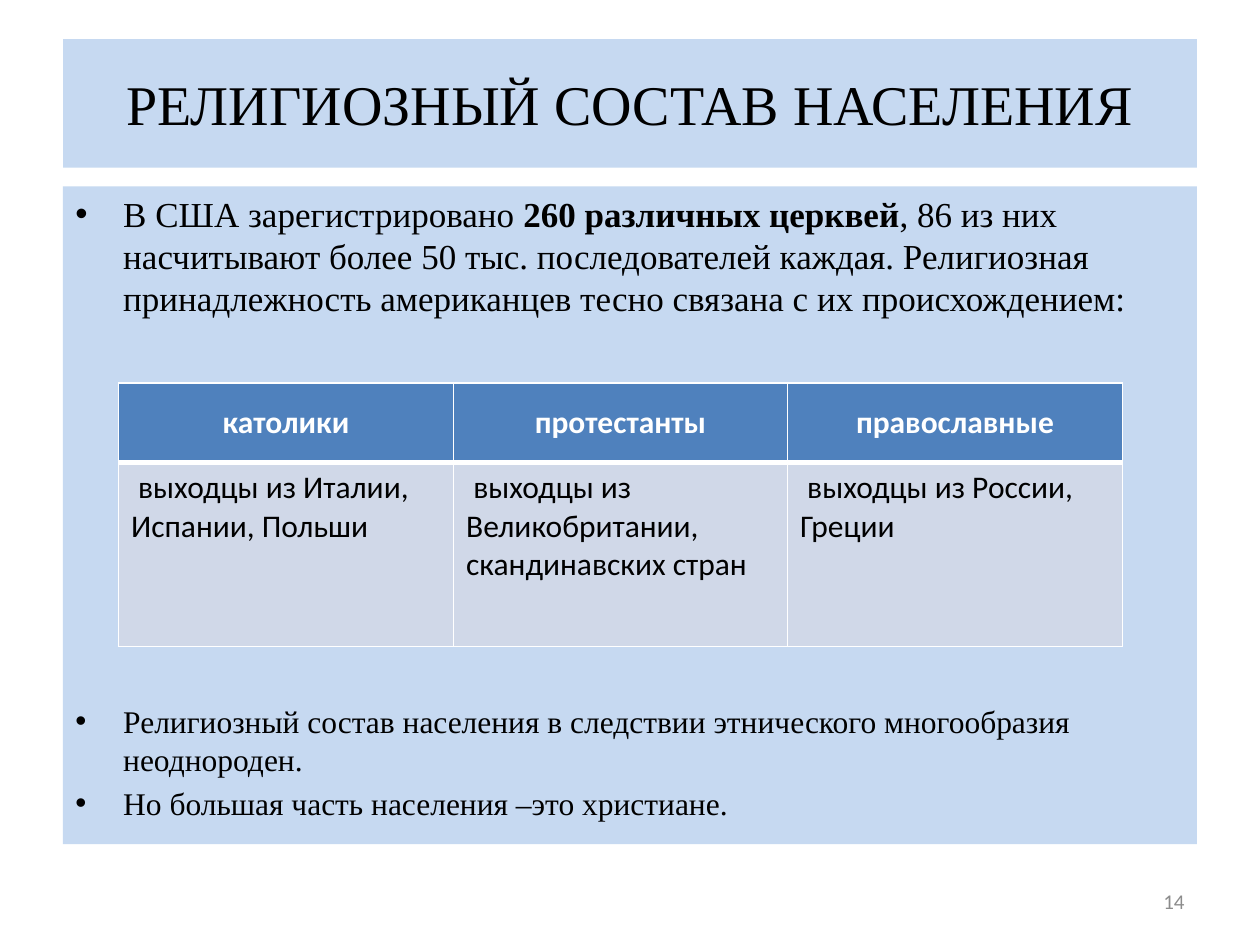
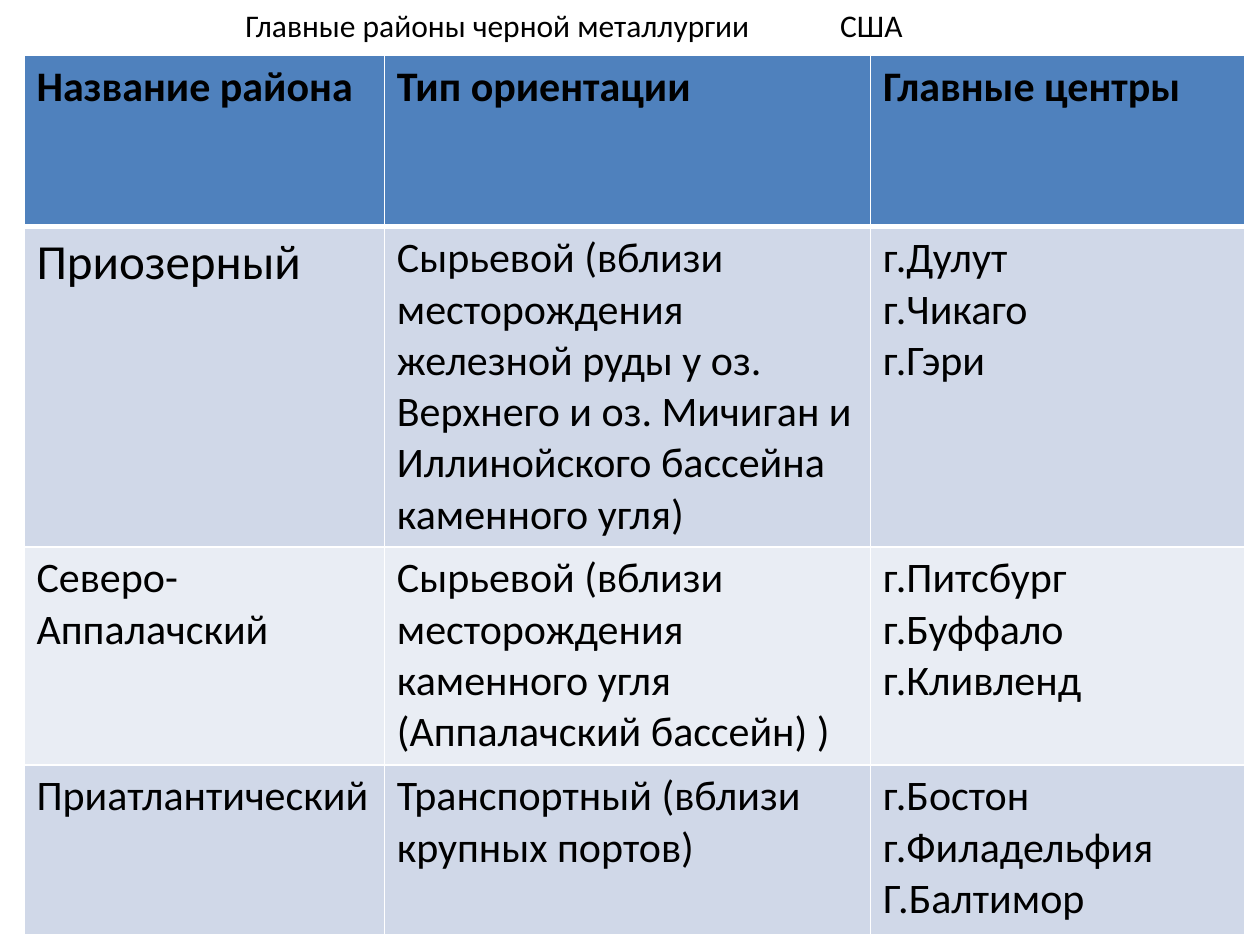
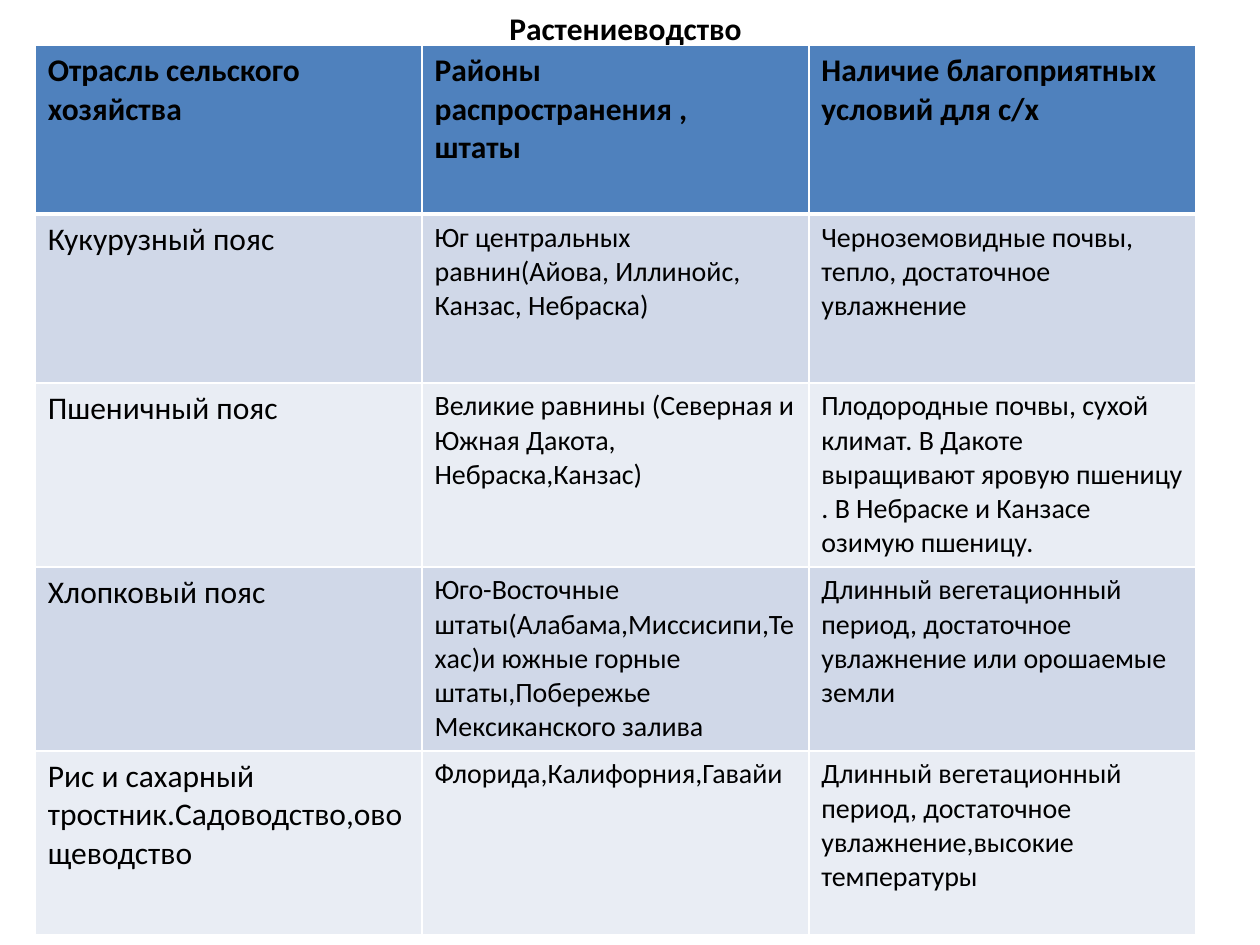
from lxml.etree import SubElement
from pptx import Presentation
from pptx.dml.color import RGBColor
from pptx.enum.text import MSO_ANCHOR as Anchor, MSO_AUTO_SIZE as AutoSize, PP_ALIGN as Align
from pptx.oxml.ns import qn
from pptx.util import Inches, Pt

BLACK = RGBColor(0x00, 0x00, 0x00)
WHITE = RGBColor(0xFF, 0xFF, 0xFF)
GRAY = RGBColor(0x8C, 0x8C, 0x8C)
PANEL = RGBColor(0xC6, 0xD9, 0xF1)
HEADER = RGBColor(0x4F, 0x81, 0xBD)
BANDS = (RGBColor(0xE9, 0xED, 0xF4), RGBColor(0xD0, 0xD8, 0xE8))
SANS = "Calibri"
SERIF = "Times New Roman"
TITLE_ONLY, BLANK = 5, 6
HAIR, RULE = 1, 3

RELIGIONS = [
    ["католики", "протестанты", "православные"],
    [" выходцы из Италии, Испании, Польши",
     " выходцы из Великобритании, скандинавских стран",
     " выходцы из России, Греции"],
]
STEEL = [
    ["Название района", "Тип ориентации", "Главные центры"],
    ["Приозерный",
     "Сырьевой (вблизи месторождения железной руды у оз. Верхнего и оз. Мичиган "
     "и Иллинойского бассейна каменного угля)",
     "г.Дулут\nг.Чикаго\nг.Гэри"],
    ["Северо-Аппалачский",
     "Сырьевой (вблизи месторождения каменного угля (Аппалачский бассейн) )",
     "г.Питсбург\nг.Буффало\nг.Кливленд"],
    ["Приатлантический", "Транспортный (вблизи крупных портов)",
     "г.Бостон\nг.Филадельфия\nГ.Балтимор"],
]
CROPS = [
    ["Отрасль сельского хозяйства", "Районы распространения ,\nштаты",
     "Наличие благоприятных условий для с/х"],
    ["Кукурузный пояс", "Юг центральных равнин(Айова, Иллинойс, Канзас, Небраска)",
     "Черноземовидные почвы, тепло, достаточное увлажнение"],
    ["Пшеничный пояс", "Великие равнины (Северная и Южная Дакота, Небраска,Канзас)",
     "Плодородные почвы, сухой климат. В Дакоте выращивают яровую пшеницу "
     ". В Небраске и Канзасе озимую пшеницу."],
    ["Хлопковый пояс",
     "Юго-Восточные штаты(Алабама,Миссисипи,Техас)и южные горные штаты,"
     "Побережье Мексиканского залива",
     "Длинный вегетационный период, достаточное увлажнение или орошаемые земли"],
    ["Рис и сахарный тростник.Садоводство,овощеводство", "Флорида,Калифорния,Гавайи",
     "Длинный вегетационный период, достаточное увлажнение,высокие температуры"],
]


def set_attrs(target, values):
    for name, value in values.items():
        setattr(target, name, value)


def fill_with(target, color):
    target.fill.solid()
    target.fill.fore_color.rgb = color


def add_run(p, text, size, color=BLACK, bold=False, font=SANS):
    r = p.add_run()
    r.text = text
    set_attrs(r.font, {"size": Pt(size), "bold": bold, "name": font})
    r.font.color.rgb = color


def write(tf, text, size, align=Align.LEFT, **style):
    for i, line in enumerate(text.split("\n")):
        p = tf.add_paragraph() if i else tf.paragraphs[0]
        p.alignment = align
        add_run(p, line, size, **style)


def add_title(s, text, box, size, **style):
    sp = s.shapes.title
    set_attrs(sp, dict(zip(("left", "top", "width", "height"), map(Inches, box))))
    set_attrs(sp.text_frame, {"auto_size": AutoSize.NONE, "word_wrap": True,
                              "vertical_anchor": Anchor.MIDDLE})
    write(sp.text_frame, text, size, Align.CENTER, **style)
    return sp


def add_text(s, box, anchor=Anchor.TOP, wrap=True):
    sp = s.shapes.add_textbox(*map(Inches, box))
    set_attrs(sp.text_frame, {"word_wrap": wrap, "vertical_anchor": anchor})
    return sp


def add_bullet(p, runs, size, before):
    p.space_before = Pt(before)
    pPr = p._p.get_or_add_pPr()
    pPr.set("marL", str(Inches(0.38)))
    pPr.set("indent", str(-Inches(0.38)))
    SubElement(pPr, qn("a:buFont"), typeface="Arial")
    SubElement(pPr, qn("a:buChar"), char="•")
    for text, bold in runs:
        add_run(p, text, size, bold=bold, font=SERIF)


def add_borders(cell, top, bottom):
    tcPr = cell._tc.get_or_add_tcPr()
    for side, width in zip("LRTB", (HAIR, HAIR, top, bottom)):
        ln = SubElement(tcPr, qn(f"a:ln{side}"), w=str(Pt(width)))
        fill = SubElement(ln, qn("a:solidFill"))
        SubElement(fill, qn("a:srgbClr"), val=str(WHITE))


def add_grid(s, data, left, top, widths, heights, size_of, header_color=BLACK,
             header_align=Align.LEFT, header_anchor=Anchor.TOP):
    frame = s.shapes.add_table(len(data), len(widths), Inches(left), Inches(top),
                               Inches(sum(widths)), Inches(sum(heights)))
    table = frame.table
    for col, width in zip(table.columns, widths):
        col.width = Inches(width)
    for row, height in zip(table.rows, heights):
        row.height = Inches(height)
    for i, texts in enumerate(data):
        head = i == 0
        for j, text in enumerate(texts):
            cell = table.cell(i, j)
            add_borders(cell, RULE if i == 1 else HAIR, RULE if head else HAIR)
            fill_with(cell, HEADER if head else BANDS[i % 2])
            cell.vertical_anchor = header_anchor if head else Anchor.TOP
            write(cell.text_frame, text, size_of(i, j),
                  header_align if head else Align.LEFT,
                  color=header_color if head else BLACK, bold=head)


def build_religion(prs):
    s = prs.slides.add_slide(prs.slide_layouts[TITLE_ONLY])
    title = add_title(s, "РЕЛИГИОЗНЫЙ СОСТАВ НАСЕЛЕНИЯ", (0.5, 0.31, 9, 1.02), 32, font=SERIF)
    panel = add_text(s, (0.5, 1.48, 9, 5.22))
    for sp in (title, panel):
        fill_with(sp, PANEL)
    tf = panel.text_frame
    add_bullet(tf.paragraphs[0], [
        ("В США зарегистрировано ", False),
        ("260 различных церквей", True),
        (", 86 из них насчитывают более 50 тыс. последователей каждая. Религиозная "
         "принадлежность американцев тесно связана с их происхождением:", False)], 20, 4.5)
    for text, before in (
            ("Религиозный состав населения в следствии этнического многообразия неоднороден.", 219),
            ("Но большая часть населения –это христиане.", 3.6)):
        add_bullet(tf.add_paragraph(), [(text, False)], 18, before)
    add_grid(s, RELIGIONS, 0.94, 3.04, [2.66, 2.65, 2.66], [0.63, 1.46], lambda i, j: 18,
             WHITE, Align.CENTER, Anchor.MIDDLE)
    number = add_text(s, (7.17, 6.95, 2.33, 0.4), Anchor.MIDDLE)
    write(number.text_frame, "14", 12, Align.RIGHT, color=GRAY)


def build_steel(prs):
    s = prs.slides.add_slide(prs.slide_layouts[BLANK])
    add_grid(s, STEEL, 0.19, 0.44, [2.86, 3.86, 2.97], [1.36, 2.54, 1.73, 1.35],
             lambda i, j: 28 if (i, j) == (1, 0) else 24)
    for text, left, width, wrap in (("Главные районы черной металлургии", 1.85, 5, True),
                                    ("США", 6.57, 0.84, False)):
        write(add_text(s, (left, 0, width, 0.4), wrap=wrap).text_frame, text, 18)


def build_crops(prs):
    s = prs.slides.add_slide(prs.slide_layouts[TITLE_ONLY])
    add_title(s, "Растениеводство", (3.35, 0, 3.23, 0.44), 18, bold=True)
    add_grid(s, CROPS, 0.28, 0.36, [3.07] * 3, [1.34] * 2 + [1.46] * 3,
             lambda i, j: 16 if i and j else 18)


def main():
    prs = Presentation()
    set_attrs(prs, {"slide_width": Inches(10), "slide_height": Inches(7.5)})
    for build in (build_religion, build_steel, build_crops):
        build(prs)
    prs.save("out.pptx")


if __name__ == "__main__":
    main()
